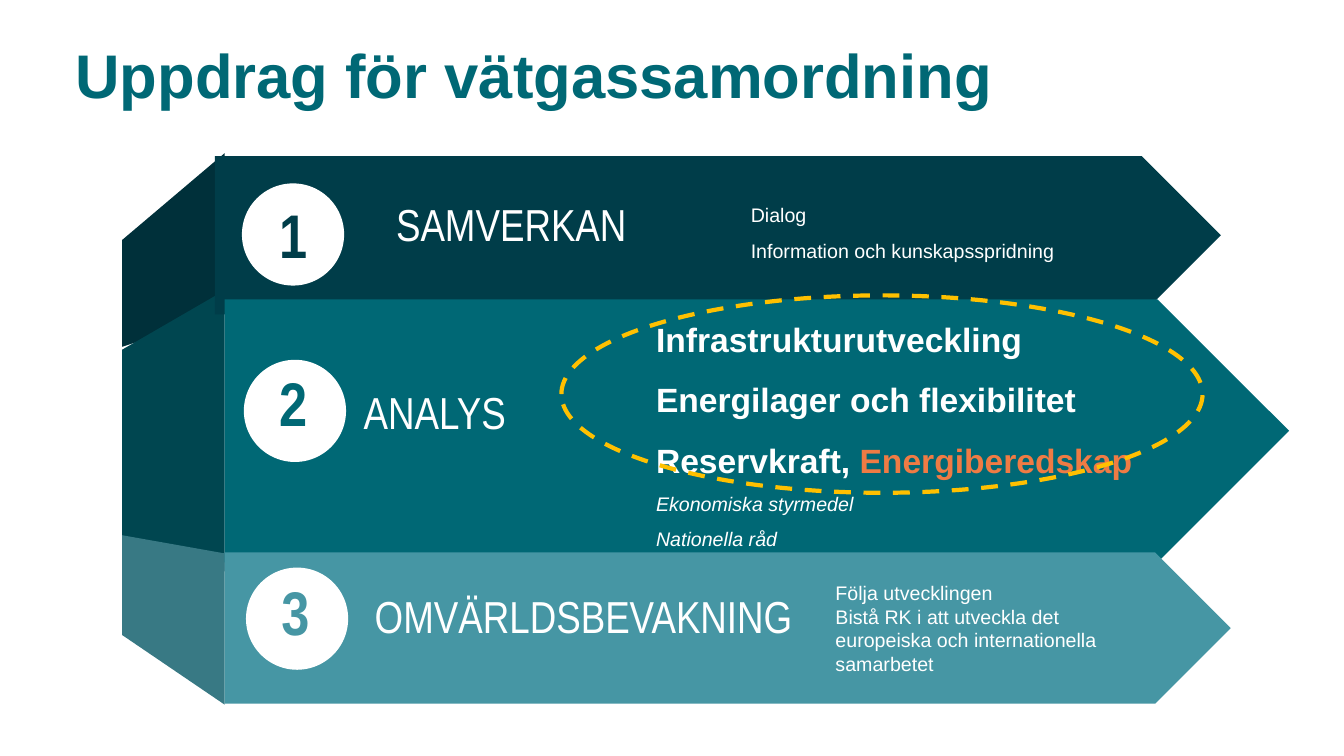
from pptx import Presentation
from pptx.dml.color import RGBColor
from pptx.enum.dml import MSO_LINE
from pptx.enum.shapes import MSO_SHAPE
from pptx.enum.text import MSO_AUTO_SIZE, PP_ALIGN
from pptx.util import Pt

COLORS = {
    "white": "FFFFFF", "orange": "EF7B44", "yellow": "FFC000",
    "dark": "003D49", "teal": "006875", "light": "4696A4",
    "dark_fold": "00303A", "teal_fold": "004650", "light_fold": "387984",
}


def paint(shape, color):
    shape.shadow.inherit = False
    shape.fill.solid()
    shape.fill.fore_color.rgb = RGBColor.from_string(COLORS[color])
    shape.line.fill.background()


def add_text(box, paragraphs, wrap=False, fit=True):
    shape = slide.shapes.add_textbox(*[Pt(value) for value in box])
    frame = shape.text_frame
    frame.word_wrap = wrap
    frame.auto_size = MSO_AUTO_SIZE.SHAPE_TO_FIT_TEXT if fit else MSO_AUTO_SIZE.NONE
    for index, (layout, runs) in enumerate(paragraphs):
        paragraph = frame.add_paragraph() if index else frame.paragraphs[0]
        for name, value in layout.items():
            setattr(paragraph, name, value)
        for text, color, style in runs:
            run = paragraph.add_run()
            run.text = text
            run.font.color.rgb = RGBColor.from_string(COLORS[color])
            for name, value in style.items():
                setattr(run.font, name, value)


TITLE = {"name": "Arial", "size": Pt(44), "bold": True}
NUMBER = {"name": "Arial Narrow", "size": Pt(44), "bold": True}
HEADING = {"name": "Arial Narrow", "size": Pt(32)}
STRONG = {"name": "Arial", "size": Pt(24), "bold": True}
BODY = {"name": "Arial", "size": Pt(14)}
ITALIC = {**BODY, "italic": True}
SPACED = {"line_spacing": 1.5}

presentation = Presentation()
presentation.slide_width = Pt(960)
presentation.slide_height = Pt(540)
slide = presentation.slides.add_slide(presentation.slide_layouts[6])

add_text((46.8, 28.8, 817, 102),
         [({"line_spacing": 0.9}, [("Uppdrag för vätgassamordning", "teal", TITLE)])],
         wrap=True, fit=False)

FOLD_LEFT, FOLD_RIGHT = 87.3, 160.5
folds = [
    ("dark_fold", 109.4, 171.4, 247.7, 223.9),
    ("teal_fold", 207.4, 249.8, 383.8, 408.2),
    ("light_fold", 395.3, 382.3, 453.6, 503.3),
]
for color, right_top, left_top, left_bottom, right_bottom in folds:
    builder = slide.shapes.build_freeform(Pt(FOLD_RIGHT), Pt(right_top))
    corners = [(FOLD_LEFT, left_top), (FOLD_LEFT, left_bottom), (FOLD_RIGHT, right_bottom)]
    builder.add_line_segments([(Pt(x), Pt(y)) for x, y in corners], close=True)
    paint(builder.convert_to_shape(), color)

arrows = [
    ("dark", (153.4, 111.6, 718.6, 113)),
    ("teal", (160.5, 213.8, 760.3, 187.9)),
    ("light", (160.5, 394.6, 718.6, 108)),
]
for color, box in arrows:
    arrow = slide.shapes.add_shape(MSO_SHAPE.PENTAGON, *[Pt(value) for value in box])
    paint(arrow, color)

CIRCLE = 73
steps = [
    ("1", "dark", (172.8, 131), (192.2, 136.8), "SAMVERKAN", (275.8, 136.8, 180.7)),
    ("2", "teal", (174.2, 257), (192.2, 257), "ANALYS", (252.7, 271.4, 117.4)),
    ("3", "light", (175.7, 405.4), (193.7, 406.1), "OMVÄRLDSBEVAKNING", (260.6, 416.9, 316.1)),
]
for number, color, (left, top), number_at, heading, heading_box in steps:
    circle = slide.shapes.add_shape(MSO_SHAPE.OVAL, Pt(left), Pt(top), Pt(CIRCLE), Pt(CIRCLE))
    paint(circle, "white")
    add_text((*number_at, 34.6, 60.5),
             [({"alignment": PP_ALIGN.CENTER}, [(number, color, NUMBER)])])
    add_text((*heading_box, 46.1), [({}, [(heading, "white", HEADING)])])

add_text((461.5, 209.5, 358.6, 185.8), [
    (SPACED, [("Infrastrukturutveckling", "white", STRONG)]),
    (SPACED, [("Energilager och flexibilitet", "white", STRONG)]),
    (SPACED, [("Reservkraft,", "white", STRONG), (" Energiberedskap", "orange", STRONG)]),
    (SPACED, [("Ekonomiska styrmedel", "white", ITALIC)]),
    (SPACED, [("Nationella råd", "white", ITALIC)]),
])
add_text((529.2, 133.2, 232.6, 54.7), [
    (SPACED, [("Dialog", "white", BODY)]),
    (SPACED, [("Information och kunskapsspridning", "white", BODY)]),
])
add_text((589.7, 403.2, 216.7, 83.5), [
    (SPACED, [("Följa utvecklingen", "white", BODY)]),
    ({}, [("Bistå RK i att utveckla det europeiska och internationella samarbetet", "white", BODY)]),
], wrap=True)

focus = slide.shapes.add_shape(MSO_SHAPE.OVAL, Pt(401), Pt(211), Pt(458), Pt(141))
focus.shadow.inherit = False
focus.fill.background()
focus.line.color.rgb = RGBColor.from_string(COLORS["yellow"])
focus.line.width = Pt(3)
focus.line.dash_style = MSO_LINE.DASH

presentation.save("out.pptx")
